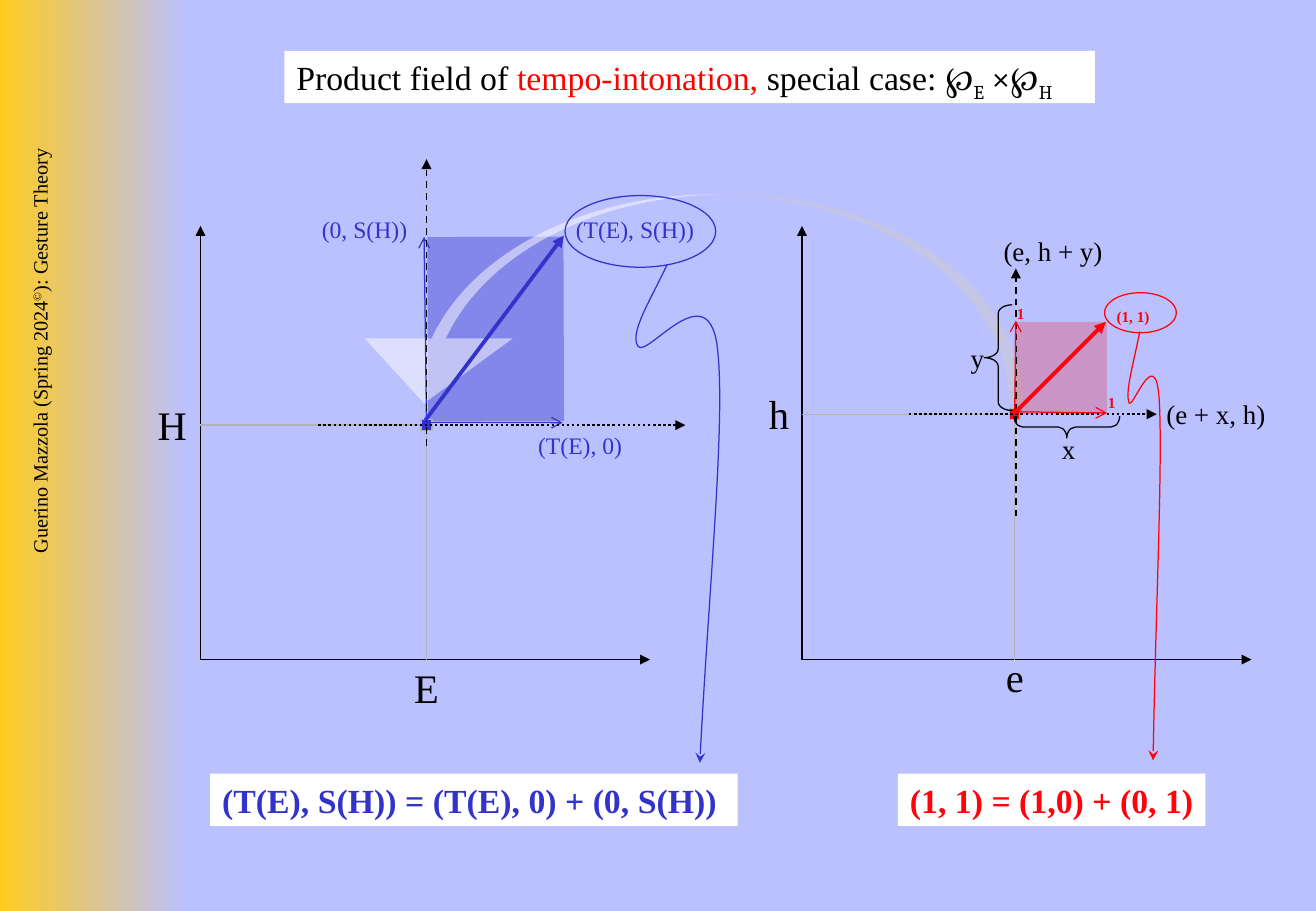
from dataclasses import dataclass

from lxml.etree import SubElement
from pptx import Presentation
from pptx.dml.color import RGBColor
from pptx.enum.dml import MSO_LINE
from pptx.enum.shapes import MSO_CONNECTOR, MSO_SHAPE
from pptx.enum.text import PP_ALIGN
from pptx.oxml.ns import qn
from pptx.util import Pt


@dataclass(frozen=True)
class Theme:
    backdrop: str = "BBC0FF"
    gold: str = "FFCB1F"
    ink: str = "000000"
    paper: str = "FFFFFF"
    guide: str = "B2B2B2"
    blue: str = "3333CC"
    red: str = "FF020B"
    accent: str = "FF0000"
    serif: str = "Times New Roman"
    symbol: str = "Cambria"
    banner: int = 20
    axis: int = 24
    offset: int = 16
    vector: int = 14
    unit: int = 9
    side: int = 12
    thin: float = 0.75
    dash: float = 1
    dot: float = 1.5
    bold: float = 2.25


THEME = Theme()
PX = 9144  # 100 px to the inch
WIDTH, HEIGHT = 1083, 750
BAND_WIDTH = 154

# Runs: text, colour, font, baseline in percent
CREDIT = [("Guerino Mazzola (Spring 2024", THEME.ink, THEME.serif, 0),
          ("©", THEME.ink, THEME.serif, 30),
          ("): Gesture Theory", THEME.ink, THEME.serif, 0)]
TITLE = [("Product field of ", THEME.ink, THEME.serif, 0),
         ("tempo-intonation,", THEME.accent, THEME.serif, 0),
         (" special case: ", THEME.ink, THEME.serif, 0),
         ("℘", THEME.ink, THEME.symbol, 0),
         ("E", THEME.ink, THEME.symbol, -25),
         (" ×℘", THEME.ink, THEME.symbol, 0),
         ("H", THEME.ink, THEME.symbol, -25)]

# Planes: left end of the axes, marked point, point colour
AXIS_TOP, AXIS_BASE, AXIS_LENGTH = 186, 543, 370
PLANES = [(165, (351, 350), THEME.blue), (660, (835, 341), THEME.red)]
POINT_SIZE = 9

# Tinted areas: box, colour, opacity in percent, rotation
BLUE_AREA = ((352, 195, 112, 152), THEME.blue, 40, 359.8)
RED_AREA = ((835, 265, 76, 76), THEME.accent, 22, 0)
MAPPING_BOX, MAPPING_SHAPE = (288, 160, 554, 172), (0.068, 0.71, 0.311)

# Braces: box, rotation, curvature
BRACES = [((869, 308, 18, 87), 270, 0.398), ((810, 251, 23, 87), 0, 0.312)]
HALOS = [((465, 161, 124, 59), THEME.blue), ((909, 241, 59, 33), THEME.red)]

# Arrows: from, to, colour, width, head, dash
DOTTED = (THEME.ink, THEME.dot, "triangle", MSO_LINE.ROUND_DOT)
DASHED = (THEME.ink, THEME.dash, "triangle", MSO_LINE.DASH)
ARROWS = [
    ((748, 341), (952, 341), *DOTTED),
    ((836, 425), (836, 221), *DASHED),
    ((351, 348), (463, 348), THEME.blue, THEME.thin, "arrow", None),
    ((351, 348), (349, 195), THEME.blue, THEME.thin, "arrow", None),
    ((833, 339), (911, 340), THEME.red, THEME.thin, "arrow", None),
    ((835, 342), (836, 264), THEME.red, THEME.thin, "arrow", None),
    ((262, 350), (564, 350), *DOTTED),
    ((351, 367), (351, 131), *DASHED),
    ((835, 340), (910, 265), THEME.red, THEME.bold, "triangle", None),
    ((350, 346), (464, 194), THEME.blue, THEME.bold, "triangle", None),
]

# Winding arrows: start, then two handles and an end for each curve
WINDING = [
    ([(549, 218), (535, 248), (518, 274), (525, 285), (532, 296), (581, 226),
      (590, 283), (598, 340), (583, 486), (576, 628)], THEME.blue),
    ([(938, 273), (933, 299), (926, 322), (929, 331), (931, 341), (951, 280),
      (954, 329), (957, 379), (951, 504), (949, 626)], THEME.red),
]

# Labels: text, box, size, colour, bold
LABELS = [
    ("E", (331, 541, 40, 50), THEME.axis, THEME.ink, False),
    ("H", (120, 324, 44, 50), THEME.axis, THEME.ink, False),
    ("e", (818, 532, 35, 50), THEME.axis, THEME.ink, False),
    ("h", (623, 315, 37, 50), THEME.axis, THEME.ink, False),
    ("(e + x, h)", (950, 322, 102, 37), THEME.offset, THEME.ink, False),
    ("x", (864, 351, 31, 37), THEME.offset, THEME.ink, False),
    ("y", (789, 276, 31, 37), THEME.offset, THEME.ink, False),
    ("(e, h + y)", (816, 188, 102, 37), THEME.offset, THEME.ink, False),
    ("1", (827, 246, 26, 25), THEME.unit, THEME.red, True),
    ("1", (902, 319, 26, 25), THEME.unit, THEME.red, True),
    ("(1, 1)", (909, 248, 47, 25), THEME.unit, THEME.red, True),
    ("(T(E), 0)", (433, 350, 95, 33), THEME.vector, THEME.blue, False),
    ("(0, S(H))", (255, 172, 90, 33), THEME.vector, THEME.blue, False),
    ("(T(E), S(H))", (464, 172, 117, 33), THEME.vector, THEME.blue, False),
]
SUMS = [
    ("(T(E), S(H)) = (T(E), 0) + (0, S(H))", (173, 637, 434, 43), THEME.banner, THEME.blue, True),
    ("(1, 1) = (1,0) + (0, 1)", (739, 637, 253, 43), THEME.banner, THEME.red, True),
]


def emu(lengths):
    return [round(length * PX) for length in lengths]


def rgb(color):
    return RGBColor.from_string(color)


def stroke(item, color, width=THEME.thin, head=None, dash=None):
    item.line.color.rgb = rgb(color)
    item.line.width = Pt(width)
    if dash:
        item.line.dash_style = dash
    if head:
        SubElement(item.line._get_or_add_ln(), qn("a:tailEnd"), type=head)


def add_preset(shapes, preset, box, fill=None, opacity=100, line=None):
    item = shapes.add_shape(preset, *emu(box))
    item.shadow.inherit = False
    if fill:
        item.fill.solid()
        item.fill.fore_color.rgb = rgb(fill)
        if opacity < 100:
            tint = item.fill._xPr.find(".//" + qn("a:srgbClr"))
            SubElement(tint, qn("a:alpha"), val=str(opacity * 1000))
    else:
        item.fill.background()
    if line:
        stroke(item, line)
    else:
        item.line.fill.background()
    return item


def add_area(shapes, area):
    box, color, opacity, rotation = area
    add_preset(shapes, MSO_SHAPE.RECTANGLE, box, color, opacity).rotation = rotation


def add_arrow(shapes, start, end, color, width, head, dash):
    arrow = shapes.add_connector(MSO_CONNECTOR.STRAIGHT, *emu(start + end))
    stroke(arrow, color, width, head, dash)
    SubElement(arrow._element.spPr, qn("a:effectLst"))


def add_path(shapes, points, color, head=None):
    start, *rest = [emu(point) for point in points]
    builder = shapes.build_freeform(*start)
    builder.add_line_segments(rest, close=False)
    outline = builder.convert_to_shape()
    outline.shadow.inherit = False
    outline.fill.background()
    stroke(outline, color, head=head)
    return outline


def bend(outline):
    """Turn each three straight segments into one cubic Bézier curve."""
    track = outline._element.find(".//" + qn("a:path"))
    segments = track.findall(qn("a:lnTo"))
    for first in range(0, len(segments), 3):
        curve = SubElement(track, qn("a:cubicBezTo"))
        for segment in segments[first:first + 3]:
            curve.append(segment[0])
            track.remove(segment)


def add_text(shapes, runs, box, size, bold=False, fill=None):
    holder = shapes.add_textbox(*emu(box))
    if fill:
        holder.fill.solid()
        holder.fill.fore_color.rgb = rgb(fill)
    frame = holder.text_frame
    frame.word_wrap = True
    for words, color, font, baseline in runs:
        run = frame.paragraphs[0].add_run()
        run.text = words
        run.font.name, run.font.size, run.font.bold = font, Pt(size), bold
        run.font.color.rgb = rgb(color)
        if baseline:
            run._r.get_or_add_rPr().set("baseline", str(baseline * 1000))
    return holder


def add_plane(shapes, left, point, color):
    corner, (x, y) = (left, AXIS_BASE), point
    for end in ((left, AXIS_TOP), (left + AXIS_LENGTH, AXIS_BASE)):
        add_arrow(shapes, corner, end, THEME.ink, THEME.thin, "triangle", None)
    add_path(shapes, [(left, y), point, (x, AXIS_BASE)], THEME.guide)
    half = POINT_SIZE / 2
    add_preset(shapes, MSO_SHAPE.RECTANGLE, (x - half, y - half, POINT_SIZE, POINT_SIZE),
               color, line=THEME.guide)


def main():
    deck = Presentation()
    deck.slide_width, deck.slide_height = emu((WIDTH, HEIGHT))
    slide = deck.slides.add_slide(deck.slide_layouts[6])
    slide.background.fill.solid()
    slide.background.fill.fore_color.rgb = rgb(THEME.backdrop)
    shapes = slide.shapes

    band = add_preset(shapes, MSO_SHAPE.RECTANGLE, (0, 0, BAND_WIDTH, HEIGHT))
    band.fill.gradient()
    band.fill.gradient_angle = 0
    for stop, position, color in zip(band.fill.gradient_stops, (0, 1), (THEME.gold, THEME.backdrop)):
        stop.position, stop.color.rgb = position, rgb(color)
    credit = add_text(shapes, CREDIT, (-250, 380, 565, 30), THEME.side)
    credit.rotation = 270
    credit.text_frame.paragraphs[0].alignment = PP_ALIGN.RIGHT
    add_text(shapes, TITLE, (234, 42, 667, 43), THEME.banner, fill=THEME.paper)

    add_area(shapes, BLUE_AREA)
    for plane in PLANES:
        add_plane(shapes, *plane)
    mapping = add_preset(shapes, MSO_SHAPE.CURVED_DOWN_ARROW, MAPPING_BOX, THEME.paper, 50)
    mapping._element.spPr.xfrm.set("flipH", "1")
    for index, value in enumerate(MAPPING_SHAPE):
        mapping.adjustments[index] = value
    add_area(shapes, RED_AREA)

    for box, rotation, curvature in BRACES:
        brace = add_preset(shapes, MSO_SHAPE.LEFT_BRACE, box, line=THEME.ink)
        brace.rotation, brace.adjustments[0] = rotation, curvature
    for arrow in ARROWS:
        add_arrow(shapes, *arrow)
    for box, color in HALOS:
        add_preset(shapes, MSO_SHAPE.OVAL, box, line=color)
    for entries, fill in ((LABELS, None), (SUMS, THEME.paper)):
        for words, box, size, color, bold in entries:
            label = add_text(shapes, [(words, color, THEME.serif, 0)], box, size, bold, fill)
            label.text_frame.margin_right = 0
    for nodes, color in WINDING:
        bend(add_path(shapes, nodes, color, "stealth"))
    deck.save("out.pptx")


if __name__ == "__main__":
    main()
